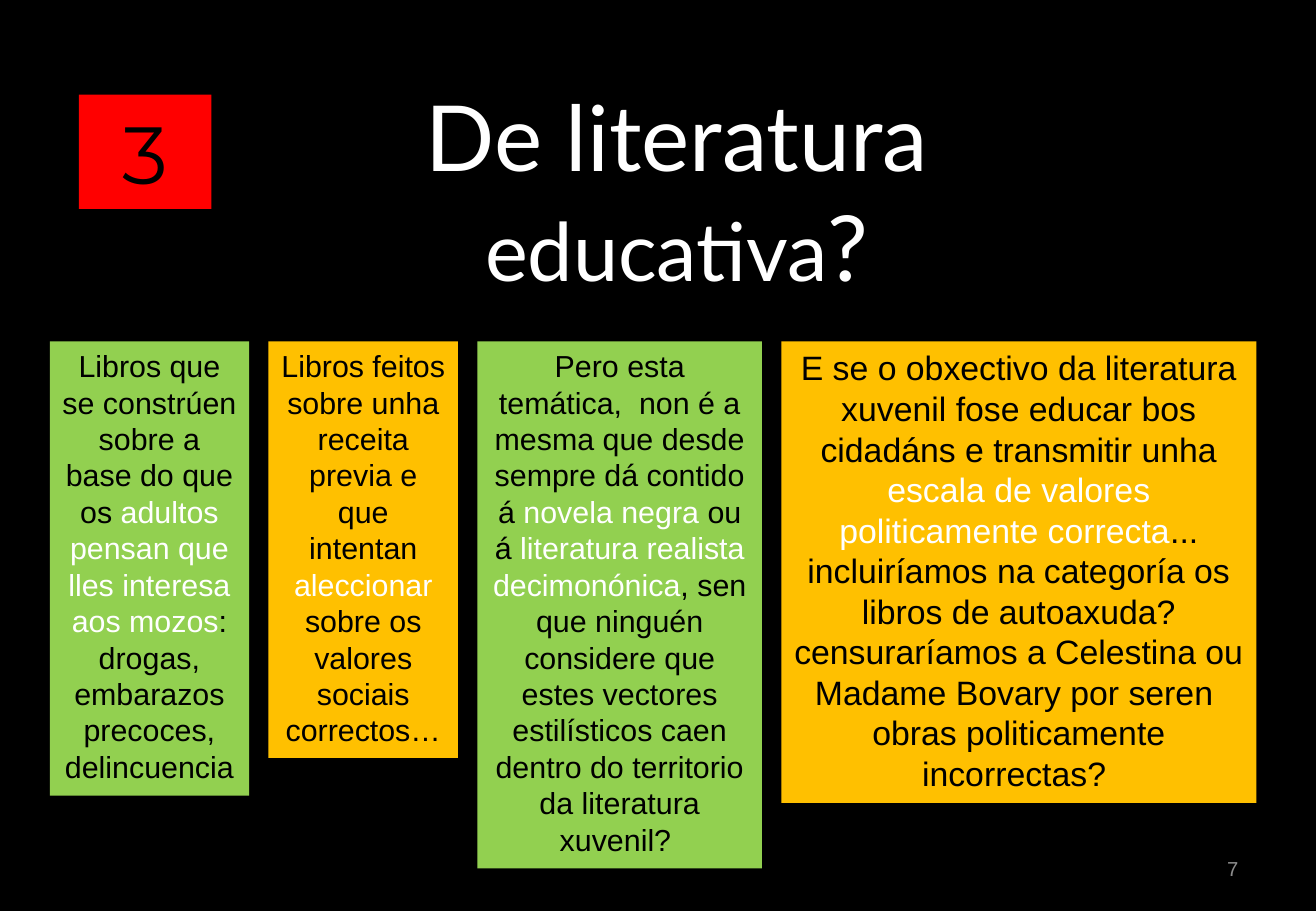
from pptx import Presentation
from pptx.dml.color import RGBColor
from pptx.enum.shapes import MSO_SHAPE
from pptx.enum.text import MSO_ANCHOR, MSO_AUTO_SIZE, PP_ALIGN
from pptx.util import Inches, Pt

RECTANGLE = MSO_SHAPE.RECTANGLE
TOP, MIDDLE = MSO_ANCHOR.TOP, MSO_ANCHOR.MIDDLE
CENTER, RIGHT = PP_ALIGN.CENTER, PP_ALIGN.RIGHT
NO_FIT = MSO_AUTO_SIZE.NONE
GROW = MSO_AUTO_SIZE.SHAPE_TO_FIT_TEXT

BLACK, WHITE, GREY = "000000", "FFFFFF", "8C8C8C"
GREEN, AMBER, RED = "92D050", "FFC000", "FF0000"

TITLE_LINES = [[("De literatura", 54)], [("educativa", 48), ("?", 54)]]

COLUMNS = [
    (1.64, 3.74, GREEN, 18, [
        ("Libros que se constrúen sobre a base do que os ", BLACK),
        ("adultos pensan que lles interesa aos mozos", WHITE),
        (": drogas, embarazos precoces, delincuencia", BLACK),
    ]),
    (1.56, 3.43, AMBER, 18, [
        ("Libros feitos sobre unha receita previa e que intentan ", BLACK),
        ("aleccionar", WHITE),
        (" sobre os valores sociais correctos…", BLACK),
    ]),
    (2.34, 4.34, GREEN, 18, [
        ("Pero esta temática,  non é a mesma que desde sempre dá contido á ", BLACK),
        ("novela negra ", WHITE),
        ("ou á ", BLACK),
        ("literatura realista decimonónica", WHITE),
        (", sen que ninguén considere que estes vectores estilísticos caen "
         "dentro do territorio da literatura xuvenil? ", BLACK),
    ]),
    (3.91, 3.8, AMBER, 20, [
        ("E se o obxectivo da literatura xuvenil fose educar bos cidadáns "
         "e transmitir unha ", BLACK),
        ("escala de valores politicamente correcta", WHITE),
        ("... incluiríamos na categoría os libros de autoaxuda? censuraríamos "
         "a Celestina ou Madame Bovary por seren  obras politicamente "
         "incorrectas? ", BLACK),
    ]),
]
COLUMNS_LEFT, COLUMNS_TOP, COLUMN_GAP = 0.41, 2.81, 0.16


def color(value):
    return RGBColor.from_string(value)


def add_run(paragraph, text, size, font, ink):
    run = paragraph.add_run()
    run.text = text
    run.font.size = Pt(size)
    run.font.name = font
    run.font.color.rgb = color(ink)


def set_frame(shape, anchor, align, fit=NO_FIT):
    frame = shape.text_frame
    frame.word_wrap = True
    frame.auto_size = fit
    frame.vertical_anchor = anchor
    paragraph = frame.paragraphs[0]
    paragraph.alignment = align
    return paragraph


def add_block(slide, left, top, width, height, fill):
    block = slide.shapes.add_shape(
        RECTANGLE, Inches(left), Inches(top), Inches(width), Inches(height))
    block.shadow.inherit = False
    block.fill.solid()
    block.fill.fore_color.rgb = color(fill)
    block.line.fill.background()
    return block


def main():
    deck = Presentation()
    deck.slide_width, deck.slide_height = Inches(10.83), Inches(7.5)
    slide = deck.slides.add_slide(deck.slide_layouts[5])
    slide.background.fill.solid()
    slide.background.fill.fore_color.rgb = color(BLACK)

    title = slide.shapes.title
    title.left, title.top = Inches(1.35), Inches(0.94)
    title.width, title.height = Inches(8.44), Inches(1.25)
    heading = set_frame(title, MIDDLE, CENTER)
    for index, line in enumerate(TITLE_LINES):
        if index:
            heading.add_line_break()
        for text, size in line:
            add_run(heading, text, size, "Lato", WHITE)

    left = COLUMNS_LEFT
    for width, height, fill, size, passages in COLUMNS:
        column = add_block(slide, left, COLUMNS_TOP, width, height, fill)
        paragraph = set_frame(column, TOP, CENTER, GROW)
        for text, ink in passages:
            add_run(paragraph, text, size, "Arial", ink)
        left += width + COLUMN_GAP

    section = add_block(slide, 0.65, 0.78, 1.09, 0.94, RED)
    add_run(set_frame(section, MIDDLE, CENTER), "3", 48, "Montserrat", BLACK)

    page_number = slide.shapes.add_textbox(
        Inches(7.76), Inches(6.95), Inches(2.53), Inches(0.4))
    add_run(set_frame(page_number, MIDDLE, RIGHT), "7", 12, "Arial", GREY)

    deck.save("out.pptx")


if __name__ == "__main__":
    main()
